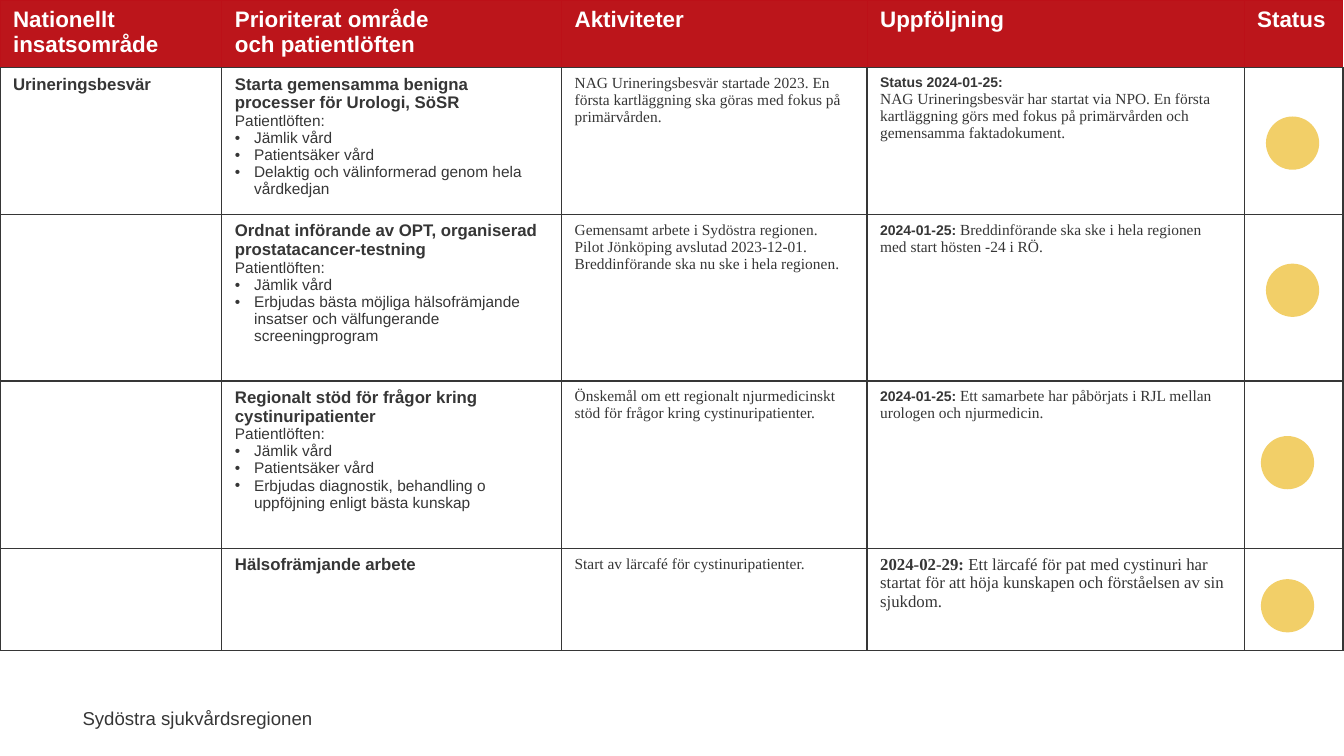
from dataclasses import dataclass

from lxml.etree import SubElement
from pptx import Presentation
from pptx.dml.color import RGBColor
from pptx.enum.shapes import MSO_SHAPE as Shape
from pptx.enum.text import MSO_AUTO_SIZE as AutoSize, PP_ALIGN as Align
from pptx.oxml.ns import qn
from pptx.util import Inches, Pt


@dataclass(frozen=True)
class Theme:
    sans: str = "Arial"
    serif: str = "Times New Roman"
    white: str = "FFFFFF"
    ink: str = "363636"
    red: str = "BC151B"
    border_red: str = "BC1018"
    yellow: str = "F2CF68"
    header: float = 16
    footer: float = 13.3
    heading: float = 12
    body: float = 11
    date: float = 10


theme = Theme()


def write(paragraph, text, size=theme.body, font=theme.sans, color=theme.ink, bold=False, bullet=False):
    """Add a run to a paragraph; a newline in the text becomes a line break."""
    if bullet:
        properties = paragraph._p.get_or_add_pPr()
        properties.set("marL", str(Inches(0.19)))
        properties.set("indent", str(-Inches(0.19)))
        SubElement(properties, qn("a:buFont"), typeface=theme.sans)
        SubElement(properties, qn("a:buChar"), char="•")
    for index, line in enumerate(text.split("\n")):
        if index:
            paragraph.add_line_break()
        run = paragraph.add_run()
        run.text = line
        run.font.size = Pt(size)
        run.font.name = font
        run.font.bold = bold
        run.font.color.rgb = RGBColor.from_string(color)


def set_borders(cell, colors, widths):
    """Draw the left, right, top and bottom borders of a cell."""
    properties = cell._tc.get_or_add_tcPr()
    for side, color, width in zip("LRTB", colors, widths):
        line = SubElement(properties, qn(f"a:ln{side}"), w=str(Pt(width)))
        SubElement(SubElement(line, qn("a:solidFill")), qn("a:srgbClr"), val=color)


# Text styles
title = dict(size=theme.header, color=theme.white, bold=True)
heading = dict(size=theme.heading, bold=True)
plain = dict()
bullet = dict(bullet=True)
serif = dict(font=theme.serif)
date = dict(size=theme.date, bold=True)
large_serif = dict(size=theme.heading, font=theme.serif)
large_date = dict(size=theme.heading, font=theme.serif, bold=True)

# Table content: each cell is a list of paragraphs, each paragraph a list of runs
promises = [("Patientlöften:", plain)]
equal_care = [("Jämlik vård", bullet)]
safe_care = [("Patientsäker vård", bullet)]
headers = ["Nationellt insatsområde", "Prioriterat område \noch patientlöften", "Aktiviteter", "Uppföljning", "Status"]
rows = [
    [[[(header, title)]] for header in headers],
    [
        [[("Urineringsbesvär", heading)]],
        [
            [("Starta gemensamma benigna processer för Urologi, SöSR", heading)],
            promises, equal_care, safe_care,
            [("Delaktig och välinformerad genom hela vårdkedjan", bullet)],
        ],
        [[("NAG Urineringsbesvär startade 2023. En första kartläggning ska göras med fokus på primärvården.", serif)]],
        [
            [("Status 2024-01-25:", date)],
            [("NAG Urineringsbesvär har startat via NPO. En första kartläggning görs med fokus på "
              "primärvården och gemensamma faktadokument.", serif)],
        ],
        [],
    ],
    [
        [],
        [
            [("Ordnat införande av OPT, organiserad prostatacancer-testning", heading)],
            promises, equal_care,
            [("Erbjudas bästa möjliga hälsofrämjande insatser och välfungerande screeningprogram", bullet)],
        ],
        [
            [("Gemensamt arbete i Sydöstra regionen.", serif)],
            [("Pilot Jönköping avslutad 2023-12-01. Breddinförande ska nu ske i hela regionen.", serif)],
        ],
        [[("2024-01-25: ", date), ("Breddinförande ska ske i hela regionen med start hösten -24 i RÖ.", serif)]],
        [],
    ],
    [
        [],
        [
            [("Regionalt stöd för frågor kring cystinuripatienter", heading)],
            promises, equal_care, safe_care,
            [("Erbjudas diagnostik, behandling o uppföjning enligt bästa kunskap", bullet)],
        ],
        [[("Önskemål om ett regionalt njurmedicinskt stöd för frågor kring cystinuripatienter.", serif)]],
        [[("2024-01-25: ", date), ("Ett samarbete har påbörjats i RJL mellan urologen och njurmedicin.", serif)]],
        [],
    ],
    [
        [],
        [[("Hälsofrämjande arbete", heading)]],
        [[("Start av lärcafé för cystinuripatienter.", serif)]],
        [[("2024-02-29: ", large_date),
          ("Ett lärcafé för pat med cystinuri har startat för att höja kunskapen och förståelsen av sin sjukdom.",
           large_serif)]],
        [],
    ],
]
column_widths = [2.2, 3.37, 3.03, 3.74, 0.98]
row_heights = [0.67, 1.44, 1.65, 1.66, 1.01]

# Slide
presentation = Presentation()
presentation.slide_width = Inches(13.33)
presentation.slide_height = Inches(7.5)
slide = presentation.slides.add_slide(presentation.slide_layouts[6])

# Footer
footer = slide.shapes.add_textbox(Inches(0.7), Inches(6.96), Inches(2.5), Inches(0.33)).text_frame
footer.word_wrap = False
footer.auto_size = AutoSize.SHAPE_TO_FIT_TEXT
footer.paragraphs[0].alignment = Align.RIGHT
write(footer.paragraphs[0], "Sydöstra sjukvårdsregionen", size=theme.footer)

# Table
table = slide.shapes.add_table(
    len(rows), len(headers), 0, 0, Inches(sum(column_widths)), Inches(sum(row_heights))
).table
table.horz_banding = False
for column, width in zip(table.columns, column_widths):
    column.width = Inches(width)
for row_index, (row, height) in enumerate(zip(rows, row_heights)):
    table.rows[row_index].height = Inches(height)
    for column_index, paragraphs in enumerate(row):
        cell = table.cell(row_index, column_index)
        cell.margin_left = cell.margin_right = Inches(0.13)
        cell.margin_top = cell.margin_bottom = Inches(0.07)
        if row_index == 0:
            set_borders(cell, [theme.border_red] * 3 + [theme.ink], [0.75] * 3 + [1])
            cell.fill.solid()
            cell.fill.fore_color.rgb = RGBColor.from_string(theme.red)
        else:
            set_borders(cell, [theme.ink] * 4, [1] * 4)
            cell.fill.background()
        for index, runs in enumerate(paragraphs):
            frame = cell.text_frame
            paragraph = frame.add_paragraph() if index else frame.paragraphs[0]
            for text, style in runs:
                write(paragraph, text, **style)

# Status markers
for left, top in [(12.57, 1.17), (12.57, 2.63), (12.52, 4.34), (12.52, 5.76)]:
    marker = slide.shapes.add_shape(
        Shape.FLOWCHART_CONNECTOR, Inches(left), Inches(top), Inches(0.5), Inches(0.5)
    )
    marker.shadow.inherit = False
    marker.fill.solid()
    marker.fill.fore_color.rgb = RGBColor.from_string(theme.yellow)
    marker.line.color.rgb = RGBColor.from_string(theme.yellow)
    marker.line.width = Pt(2)

presentation.save("out.pptx")
